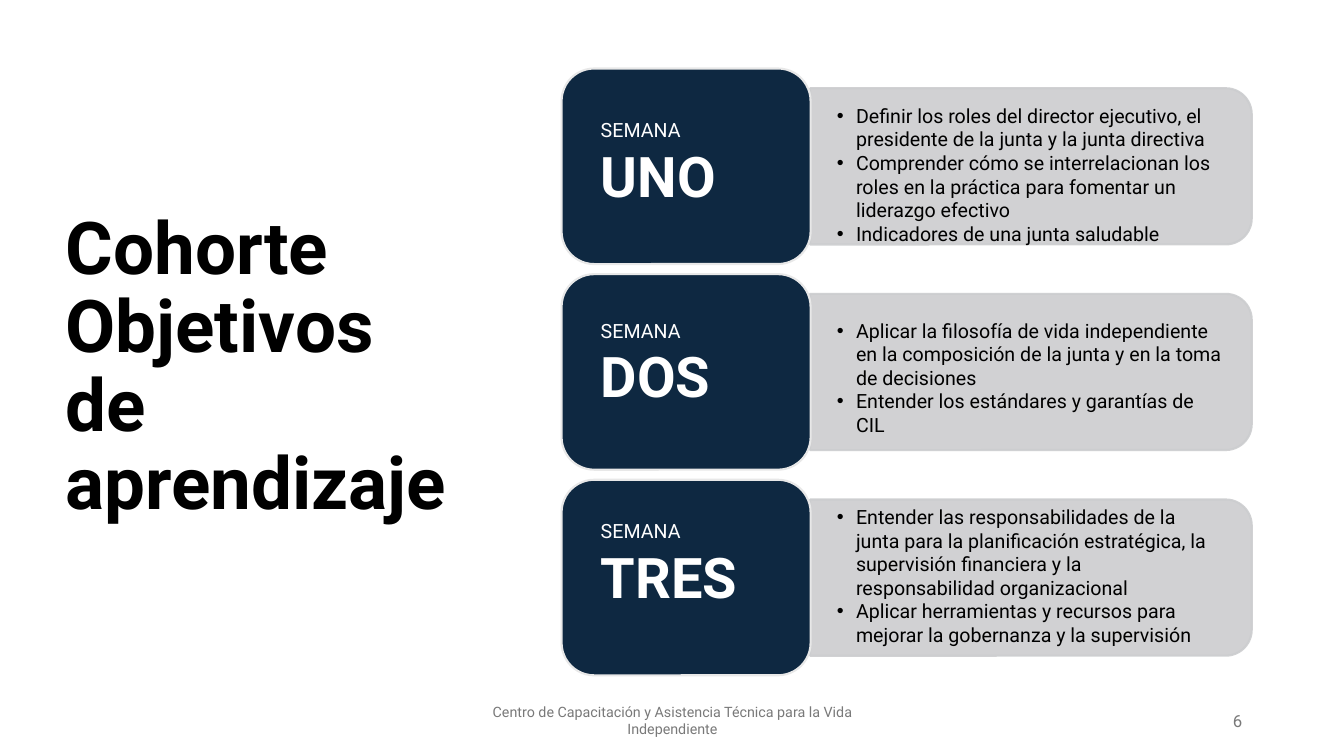
"""Build the slide of learning objectives for the three weeks of the cohort."""
from pptx import Presentation
from pptx.dml.color import RGBColor
from pptx.enum.shapes import MSO_SHAPE as Preset
from pptx.enum.text import MSO_ANCHOR as Anchor, MSO_AUTO_SIZE as AutoSize, PP_ALIGN as Align
from pptx.oxml.ns import qn
from pptx.util import Pt
from lxml.etree import SubElement

PX = 9144
COLORS = {
    "navy": "0E2841", "edge": "E8E8E8", "band": "CCCDCF",
    "white": "FFFFFF", "black": "000000", "gray": "797979",
}
LIST_INDENT = 19
ROW_PITCH = 204
LABEL_PITCH = 199
WEEKS = [
    ("UNO", 98, 128, [
        "Definir los roles del director ejecutivo, el presidente de la junta y la junta directiva",
        "Comprender cómo se interrelacionan los roles en la práctica para fomentar un liderazgo efectivo",
        "Indicadores de una junta saludable",
    ]),
    ("DOS", 311, 81, [
        "Aplicar la filosofía de vida independiente en la composición de la junta y en la toma de decisiones",
        "Entender los estándares y garantías de CIL",
    ]),
    ("TRES", 496, 128, [
        "Entender las responsabilidades de la junta para la planificación estratégica, "
        "la supervisión financiera y la responsabilidad organizacional",
        "Aplicar herramientas y recursos para mejorar la gobernanza y la supervisión",
    ]),
]
FOOTERS = [
    ("Centro de Capacitación y Asistencia Técnica para la Vida Independiente",
     442, 450, 10.2, Align.CENTER),
    ("6", 942, 300, 12, Align.RIGHT),
]


def write_text(shape, box, lines, color, anchor=Anchor.TOP, **formats):
    """Place a text shape and fill it with (text, size, bold) lines."""
    shape.left, shape.top, shape.width, shape.height = (length * PX for length in box)
    frame = shape.text_frame
    frame.word_wrap = True
    frame.auto_size = AutoSize.NONE
    frame.vertical_anchor = anchor
    frame.text = "\n".join(text for text, size, bold in lines)
    formats = {"alignment": Align.LEFT, "space_before": Pt(0), **formats}
    for paragraph, (text, size, bold) in zip(frame.paragraphs, lines):
        for name, value in formats.items():
            setattr(paragraph, name, value)
        for run in paragraph.runs:
            for name, value in {"name": "Roboto", "size": Pt(size), "bold": bold}.items():
                setattr(run.font, name, value)
            run.font.color.rgb = RGBColor.from_string(COLORS[color])


def add_panel(preset, box, fill, line):
    """Add a filled and outlined shape without shadow."""
    shape = slide.shapes.add_shape(preset, *(length * PX for length in box))
    shape.shadow.inherit = False
    shape.fill.solid()
    shape.fill.fore_color.rgb = RGBColor.from_string(COLORS[fill])
    shape.line.color.rgb = RGBColor.from_string(COLORS[line])
    shape.line.width = Pt(1.5)
    return shape


presentation = Presentation()
presentation.slide_width = 1333 * PX
presentation.slide_height = 750 * PX
slide = presentation.slides.add_slide(presentation.slide_layouts.get_by_name("Comparison"))
title, *bodies = slide.placeholders
tree = title.element.getparent()

title_text = "Cohorte\vObjetivos de aprendizaje"
write_text(title, (55, 61, 406, 609), [(title_text, 52, True)], "black",
           Anchor.MIDDLE, line_spacing=0.9)
tree.remove(bodies.pop().element)

for row, (week, list_top, list_height, goals) in enumerate(WEEKS):
    band = add_panel(Preset.ROUND_2_SAME_RECTANGLE,
                     (945, -54 + row * ROW_PITCH, 155, 438), "band", "band")
    band.rotation = 90
    for color in band.element.spPr.iter(qn("a:srgbClr")):
        SubElement(color, qn("a:alpha"), val="90000")
    add_panel(Preset.ROUNDED_RECTANGLE, (557, 68 + row * ROW_PITCH, 247, 194), "navy", "edge")

    label = slide.shapes.add_textbox(0, 0, 0, 0)
    write_text(label, (586, 112 + row * LABEL_PITCH, 402, 101),
               [("SEMANA", 14, False), (week, 40, True)], "white")

    body = bodies[row]
    tree.append(body.element)
    write_text(body, (820, list_top, 402, list_height),
               [(goal, 14, False) for goal in goals], "black")
    for paragraph in body.text_frame.paragraphs:
        properties = paragraph._p.get_or_add_pPr()
        properties.set("marL", str(LIST_INDENT * PX))
        properties.set("indent", str(-LIST_INDENT * PX))
        SubElement(properties, qn("a:buFont"), typeface="Arial")
        SubElement(properties, qn("a:buChar"), char="•")

for text, left, width, size, alignment in FOOTERS:
    footer = slide.shapes.add_textbox(0, 0, 0, 0)
    write_text(footer, (left, 695, width, 40), [(text, size, False)], "gray",
               Anchor.MIDDLE, alignment=alignment, space_after=Pt(6))

presentation.save("out.pptx")
